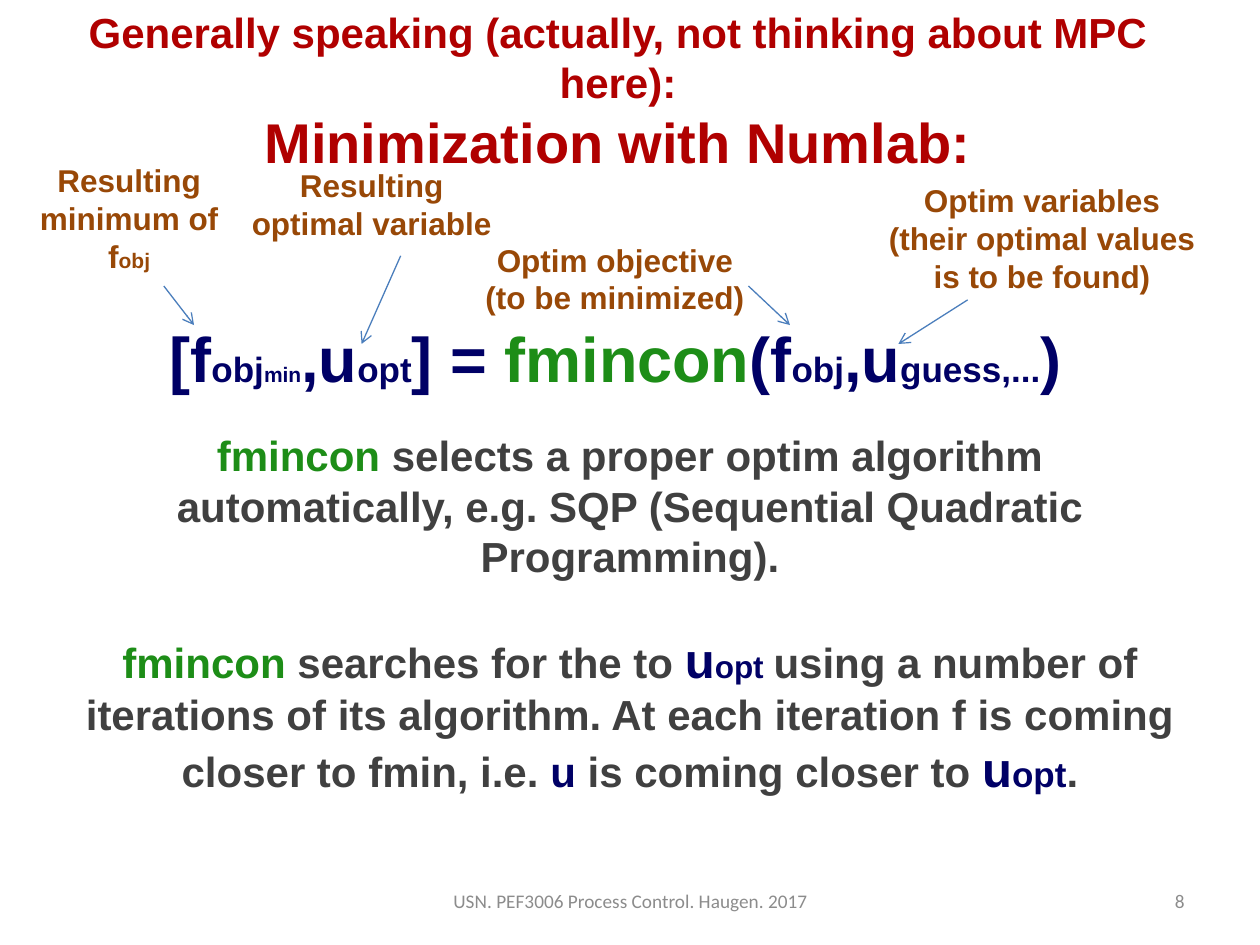
from dataclasses import dataclass
from typing import NamedTuple

from lxml import etree
from pptx import Presentation
from pptx import util as u
from pptx.dml.color import RGBColor
from pptx.enum import shapes, text
from pptx.oxml import ns

# Grid: 100 columns by 75 rows
COLUMNS, ROWS = 100, 75
CELL = u.Inches(10) // COLUMNS


@dataclass(frozen=True)
class Theme:
    heading: str = "B00000"
    note: str = "984807"
    symbol: str = "000066"
    function: str = "1D8D17"
    body: str = "404040"
    footer: str = "8C8C8C"
    arrow: str = "4B7EBC"
    face: str = "Arial"
    footer_face: str = "Calibri"
    formula_size: int = 36
    title_size: int = 32
    variable_size: int = 28
    body_size: int = 24
    sub_size: int = 20
    note_size: int = 18
    small_size: int = 12
    footer_size: int = 11
    arrow_width: float = 0.75


class Run(NamedTuple):
    words: str
    size: int
    colour: str


class Box(NamedTuple):
    left: float
    top: float
    width: float
    height: float


class Block(NamedTuple):
    box: Box
    paragraphs: list[list[Run]]


class Arrow(NamedTuple):
    x1: float
    y1: float
    x2: float
    y2: float


THEME = Theme()


def note(words: str) -> list[Run]:
    return [Run(words, THEME.note_size, THEME.note)]


def symbol(words: str, size: int) -> Run:
    return Run(words, size, THEME.symbol)


def function(words: str, size: int) -> Run:
    return Run(words, size, THEME.function)


def prose(words: str) -> Run:
    return Run(words, THEME.body_size, THEME.body)


TITLE = Block(Box(1, 0, 96.1, 10.4), [
    [Run("Generally speaking (actually, not thinking about MPC here):",
         THEME.body_size, THEME.heading)],
    [Run("Minimization with Numlab:", THEME.title_size, THEME.heading)],
])

EXPLANATION = Block(Box(5.1, 33.6, 89.8, 31.3), [
    [function("fmincon ", THEME.body_size),
     prose("selects a proper optim algorithm automatically, "
           "e.g. SQP (Sequential Quadratic Programming).")],
    [function("fmincon ", THEME.body_size), prose("searches for the to "),
     symbol("u", THEME.variable_size), symbol("opt", THEME.note_size),
     symbol(" ", THEME.sub_size),
     prose("using a number of iterations of its algorithm. "
           "At each iteration f is coming closer to fmin, i.e. "),
     symbol("u ", THEME.body_size), prose("is coming closer to "),
     symbol("u", THEME.variable_size), symbol("opt", THEME.sub_size), prose(".")],
])

FORMULA = Block(Box(6.7, 24.9, 84.3, 7.1), [[
    symbol("[f", THEME.formula_size), symbol("obj", THEME.sub_size),
    symbol("min", THEME.small_size), symbol(",u", THEME.formula_size),
    symbol("opt", THEME.sub_size), symbol("] = ", THEME.formula_size),
    function("fmincon", THEME.formula_size),
    symbol("(f", THEME.formula_size), symbol("obj", THEME.sub_size),
    symbol(",u", THEME.formula_size), symbol("guess,...", THEME.sub_size),
    symbol(")", THEME.formula_size),
]])

NOTES = [
    Block(Box(32.7, 18.6, 32.2, 8.1),
          [note("Optim objective"), note("(to be minimized)")]),
    Block(Box(66.6, 13.9, 32.2, 11.1),
          [note("Optim variables\n(their optimal values"), note("is to be found)")]),
    Block(Box(1.2, 12.3, 18.1, 10.1),
          [note("Resulting\nminimum of\nf")
           + [Run("obj", THEME.small_size, THEME.note)]]),
    Block(Box(18.5, 12.7, 22, 8.1), [note("Resulting\noptimal variable")]),
]

ARROWS = [
    Arrow(59.4, 22.7, 62.7, 25.8),
    Arrow(76.8, 23.8, 71.3, 27.3),
    Arrow(13, 22.7, 15.4, 25.8),
    Arrow(31.8, 20.3, 28.7, 27.3),
]

FOOTERS = [
    (Box(34.2, 69.5, 31.7, 4), "USN. PEF3006 Process Control. Haugen. 2017",
     text.PP_ALIGN.CENTER),
    (Box(71.7, 69.5, 23.3, 4), "8", text.PP_ALIGN.RIGHT),
]


def grid(cells: float) -> int:
    return round(cells * CELL)


def apply(target, **values) -> None:
    for name, value in values.items():
        setattr(target, name, value)


def write(shape, paragraphs: list[list[Run]], face: str = THEME.face,
          bold: bool = True, align=text.PP_ALIGN.CENTER,
          anchor=text.MSO_ANCHOR.TOP, gap: float = 0) -> None:
    frame = shape.text_frame
    apply(frame, word_wrap=True, vertical_anchor=anchor,
          auto_size=text.MSO_AUTO_SIZE.NONE)
    for index, runs in enumerate(paragraphs):
        paragraph = frame.add_paragraph() if index else frame.paragraphs[0]
        apply(paragraph, alignment=align, space_after=u.Pt(0),
              space_before=u.Pt(gap if index else 0))
        for words, size, colour in runs:
            for number, line in enumerate(words.split("\n")):
                if number:
                    paragraph.add_line_break()
                run = paragraph.add_run()
                run.text = line
                apply(run.font, name=face, size=u.Pt(size), bold=bold)
                run.font.color.rgb = RGBColor.from_string(colour)


def fill_placeholder(shape, block: Block, gap: float = 0) -> None:
    apply(shape, **{side: grid(cells) for side, cells in block.box._asdict().items()})
    write(shape, block.paragraphs, gap=gap)


def add_text(slide, block: Block, **style) -> None:
    write(slide.shapes.add_textbox(*map(grid, block.box)), block.paragraphs, **style)


def remove_bullets(shape) -> None:
    for paragraph in shape.text_frame.paragraphs:
        properties = paragraph._p.get_or_add_pPr()
        properties.set("marL", "0")
        properties.set("indent", "0")
        etree.SubElement(properties, ns.qn("a:buNone"))


def add_arrow(slide, arrow: Arrow) -> None:
    connector = slide.shapes.add_connector(
        shapes.MSO_CONNECTOR.STRAIGHT, *map(grid, arrow))
    connector.line.color.rgb = RGBColor.from_string(THEME.arrow)
    connector.line.width = u.Pt(THEME.arrow_width)
    etree.SubElement(connector.line._get_or_add_ln(), ns.qn("a:tailEnd"), type="arrow")
    etree.SubElement(connector._element.spPr, ns.qn("a:effectLst"))


def main() -> None:
    deck = Presentation()
    apply(deck, slide_width=COLUMNS * CELL, slide_height=ROWS * CELL)
    slide = deck.slides.add_slide(deck.slide_layouts[1])

    # Title and explanation
    fill_placeholder(slide.shapes.title, TITLE)
    explanation = slide.placeholders[1]
    fill_placeholder(explanation, EXPLANATION, gap=27.6)
    remove_bullets(explanation)

    # Formula with its notes and arrows
    for block in [FORMULA, *NOTES]:
        add_text(slide, block)
    for arrow in ARROWS:
        add_arrow(slide, arrow)

    # Footer and slide number
    for box, words, align in FOOTERS:
        add_text(slide, Block(box, [[Run(words, THEME.footer_size, THEME.footer)]]),
                 face=THEME.footer_face, bold=False, align=align,
                 anchor=text.MSO_ANCHOR.MIDDLE)

    deck.save("out.pptx")


if __name__ == "__main__":
    main()
